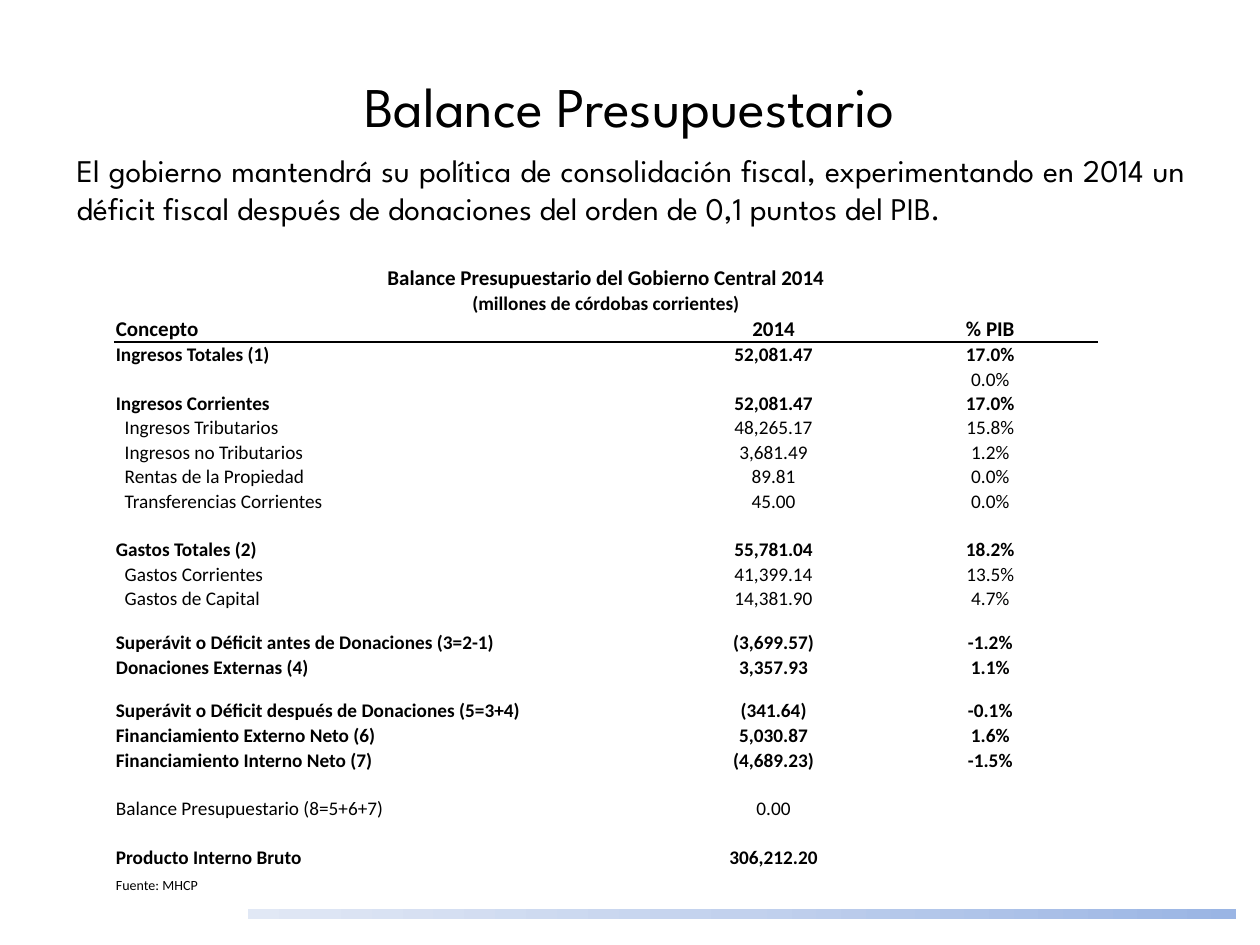
from copy import deepcopy

from lxml.etree import SubElement
from pptx import Presentation
from pptx.dml.color import RGBColor
from pptx.enum.shapes import MSO_SHAPE
from pptx.enum.text import MSO_ANCHOR, PP_ALIGN
from pptx.oxml.ns import qn
from pptx.util import Inches, Pt

INK = {"black": "000000", "white": "FFFFFF",
       "deep": "9AB5E4", "mid": "C2D1ED", "pale": "E1E8F5"}
HEAD = "League Spartan"
BODY = "Calibri"
WIDTHS = (4.36, 1.74, 1.7)
LOW, TALL = 0.18, 0.35

# kind, concept, amount, share
ROWS = [
    ("title", "Balance Presupuestario del Gobierno Central 2014", "", ""),
    ("unit", "(millones de córdobas corrientes)", "", ""),
    ("head", "Concepto", "2014", "% PIB"),
    ("total", "Ingresos Totales (1)", "52,081.47", "17.0%"),
    ("plain", "", "", "0.0%"),
    ("total", "Ingresos Corrientes", "52,081.47", "17.0%"),
    ("item", "Ingresos Tributarios", "48,265.17", "15.8%"),
    ("item", "Ingresos no Tributarios", "3,681.49", "1.2%"),
    ("item", "Rentas de la Propiedad", "89.81", "0.0%"),
    ("item", "Transferencias Corrientes", "45.00", "0.0%"),
    ("plain", "", "", ""),
    ("total", "Gastos Totales (2)", "55,781.04", "18.2%"),
    ("item", "Gastos Corrientes", "41,399.14", "13.5%"),
    ("item", "Gastos de Capital", "14,381.90", "4.7%"),
    ("gap", "Superávit o Déficit antes de Donaciones (3=2-1)", "(3,699.57)", "-1.2%"),
    ("total", "Donaciones Externas (4)", "3,357.93", "1.1%"),
    ("gap", "Superávit o Déficit después de Donaciones (5=3+4)", "(341.64)", "-0.1%"),
    ("total", "Financiamiento Externo Neto (6)", "5,030.87", "1.6%"),
    ("total", "Financiamiento Interno Neto (7)", "(4,689.23)", "-1.5%"),
    ("plain", "", "", ""),
    ("plain", "Balance Presupuestario (8=5+6+7)", "0.00", ""),
    ("plain", "", "", ""),
    ("total", "Producto Interno Bruto", "306,212.20", ""),
    ("note", "Fuente: MHCP", "", ""),
]
SIZES = {"title": 12, "head": 12, "note": 8}
BOLD = {"title", "unit", "head", "total", "gap"}


def tint(name):
    return RGBColor.from_string(INK[name])


def style(para, face, size, align, bold=False):
    para.alignment = align
    for run in para.runs:
        font = run.font
        font.name, font.size, font.bold = face, Pt(size), bold
        font.color.rgb = tint("black")


def add_title(slide, text):
    box = slide.shapes.title
    box.left, box.top = Inches(0.5), Inches(0.21)
    box.width, box.height = Inches(9), Inches(1.25)
    box.text_frame.text = text
    box.text_frame.vertical_anchor = MSO_ANCHOR.MIDDLE
    style(box.text_frame.paragraphs[0], HEAD, 32, PP_ALIGN.CENTER)


def add_lead(slide, text):
    box = slide.shapes.add_textbox(
        Inches(0.51), Inches(1.15), Inches(9), Inches(4.95))
    frame = box.text_frame
    frame.word_wrap = True
    frame.text = text
    para = frame.paragraphs[0]
    para.space_before = Pt(3.6)
    style(para, HEAD, 18, PP_ALIGN.JUSTIFY)


def add_bar(slide):
    bar = slide.shapes.add_shape(
        MSO_SHAPE.RECTANGLE, Inches(1.97), Inches(7.21), Inches(7.84), Inches(0.08))
    bar.rotation = 180
    bar.shadow.inherit = False
    bar.line.fill.background()
    bar.fill.gradient()
    bar.fill.gradient_angle = 0
    stops = bar.fill._fill._gradFill.find(qn("a:gsLst"))
    stops.insert(1, deepcopy(stops[0]))
    marks = ((0, "deep"), (0.5, "mid"), (1, "pale"))
    for stop, (place, name) in zip(bar.fill.gradient_stops, marks):
        stop.position = place
        stop.color.rgb = tint(name)


def add_edge(cell, side, name):
    line = SubElement(cell._tc.get_or_add_tcPr(), qn("a:ln" + side), w=str(Pt(1)))
    fill = SubElement(line, qn("a:solidFill"))
    SubElement(fill, qn("a:srgbClr"), val=INK[name])


def fill_cell(cell, text, kind, first, edges):
    cell.vertical_anchor = MSO_ANCHOR.BOTTOM
    cell.margin_left = Inches(0.08 if kind == "item" and first else 0.01)
    cell.margin_top = cell.margin_right = Inches(0.01)
    cell.margin_bottom = 0
    for side in "LRTB":
        add_edge(cell, side, edges.get(side, "white"))
    cell.fill.background()
    para = cell.text_frame.paragraphs[0]
    if not text:
        SubElement(para._p, qn("a:endParaRPr"), sz="1100")
        return
    para.text = text
    left = first and kind not in ("title", "unit")
    style(para, BODY, SIZES.get(kind, 11),
          PP_ALIGN.LEFT if left else PP_ALIGN.CENTER, kind in BOLD)


def add_grid(slide):
    tall = sum(TALL if row[0] == "gap" else LOW for row in ROWS)
    grid = slide.shapes.add_table(
        len(ROWS), len(WIDTHS), Inches(0.91), Inches(2.1),
        Inches(sum(WIDTHS)), Inches(tall)).table
    grid.first_row = grid.horz_banding = False
    for col, width in zip(grid.columns, WIDTHS):
        col.width = Inches(width)
    kinds = [row[0] for row in ROWS]
    rule = kinds.index("head")
    for r, (kind, *texts) in enumerate(ROWS):
        grid.rows[r].height = Inches(TALL if kind == "gap" else LOW)
        edges = {rule: {"B": "black"}, rule + 1: {"T": "black"}}.get(r, {})
        for c, text in enumerate(texts):
            fill_cell(grid.cell(r, c), text, kind, c == 0, edges)
        if kind in ("title", "unit"):
            grid.cell(r, 0).merge(grid.cell(r, len(WIDTHS) - 1))


def main():
    deck = Presentation()
    deck.slide_width, deck.slide_height = Inches(10), Inches(7.5)
    slide = deck.slides.add_slide(deck.slide_layouts[5])
    add_title(slide, "Balance Presupuestario")
    add_lead(slide, "El gobierno mantendrá su política de consolidación fiscal, "
             "experimentando en 2014 un déficit fiscal después de donaciones "
             "del orden de 0,1 puntos del PIB.")
    add_bar(slide)
    add_grid(slide)
    deck.save("out.pptx")


if __name__ == "__main__":
    main()
